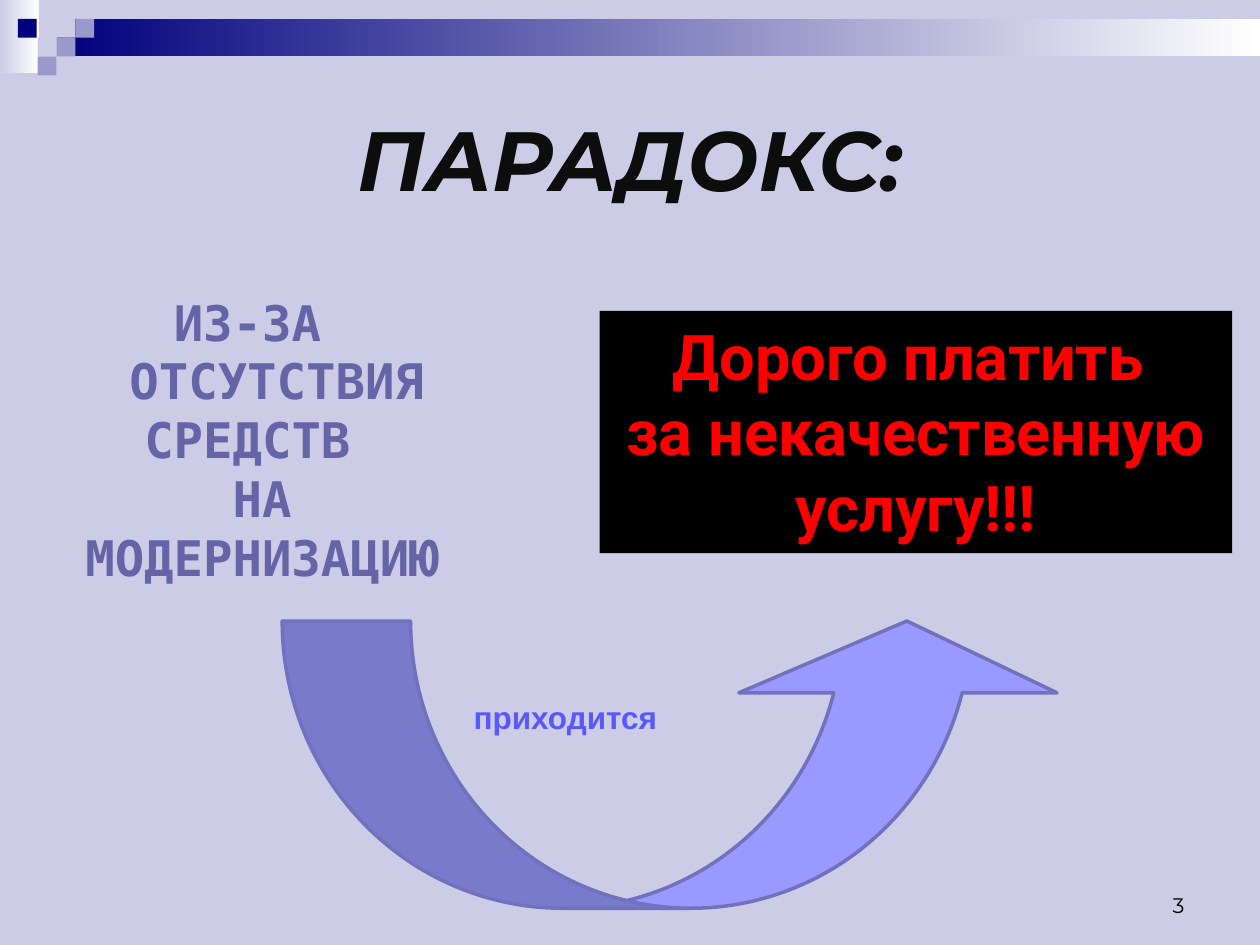
"""Build the slide about the paradox of paying dearly for a poor service."""
from dataclasses import dataclass
from typing import NamedTuple, Optional

from pptx import Presentation
from pptx.dml.color import RGBColor as RGB
from pptx.enum.shapes import MSO_SHAPE as SHAPE
from pptx.enum.text import MSO_ANCHOR as ANCHOR, PP_ALIGN as ALIGN
from pptx.util import Cm, Pt


@dataclass(frozen=True)
class Theme:
    back: str = "CCCCE6"
    navy: str = "00007D"
    lilac: str = "9999CC"
    white: str = "FFFFFF"
    black: str = "000000"
    title: str = "0D0D0D"
    cause: str = "6464A6"
    alarm: str = "FF0000"
    link: str = "5858FF"
    arrow: str = "9999FF"
    arrow_line: str = "7171BD"
    title_size: int = 48
    alarm_size: int = 36
    cause_size: int = 28
    link_size: int = 18
    number_size: int = 12


class Box(NamedTuple):
    left: float
    top: float
    width: float
    height: float


class Line(NamedTuple):
    text: str
    margin: float = 0


class Square(NamedTuple):
    col: float
    row: float
    color: str


T = Theme()
CELL = 0.38
SQUARES = [
    Square(3, 1, T.back), Square(4, 0, T.back), Square(4, 1, T.lilac),
    Square(2, 2, T.back), Square(0.95, 1, T.navy), Square(3, 2, T.lilac),
    Square(2, 3, T.lilac),
]
CAUSE = [Line("ИЗ-ЗА "), Line("ОТСУТСТВИЯ", 0.59), Line("СРЕДСТВ "),
         Line("НА"), Line("МОДЕРНИЗАЦИЮ")]
ALARM = [Line("Дорого платить "), Line("за некачественную услугу!!!")]


def lengths(box: Box) -> list:
    """Return the four sides of a box as lengths."""
    return [Cm(v) for v in box]


def add_shape(slide, kind, box: Box, color: str, end: Optional[str] = None):
    """Add a shape with no line, filled plainly or with a gradient to end."""
    sp = slide.shapes.add_shape(kind, *lengths(box))
    sp.shadow.inherit = False
    sp.line.fill.background()
    if end:
        sp.fill.gradient()
        sp.fill.gradient_angle = 0
        for stop, value in zip(sp.fill.gradient_stops, (color, end)):
            stop.color.rgb = RGB.from_string(value)
    else:
        sp.fill.solid()
        sp.fill.fore_color.rgb = RGB.from_string(color)
    return sp


def write(sp, lines: list, *, size: int, font: str, color: str, bold: bool = True,
          italic: bool = False, align=ALIGN.CENTER, anchor=ANCHOR.TOP,
          inset: Optional[float] = None) -> None:
    """Put formatted lines of text into a shape."""
    tf = sp.text_frame
    tf.word_wrap = True
    tf.vertical_anchor = anchor
    if inset is not None:
        tf.margin_left = tf.margin_right = tf.margin_top = tf.margin_bottom = Cm(inset)
    for i, line in enumerate(lines):
        p = tf.paragraphs[0] if i == 0 else tf.add_paragraph()
        p.alignment = align
        if line.margin:
            pPr = p._p.get_or_add_pPr()
            pPr.set("marL", str(Cm(line.margin)))
            pPr.set("indent", "0")
        r = p.add_run()
        r.text = line.text
        f = r.font
        f.size, f.name, f.bold, f.italic = Pt(size), font, bold, italic
        f.color.rgb = RGB.from_string(color)


def add_text(slide, box: Box, lines: list, **style) -> None:
    """Add a text box with formatted lines."""
    write(slide.shapes.add_textbox(*lengths(box)), lines, **style)


def add_banner(slide) -> None:
    """Draw the gradient bands and the small squares at the top."""
    add_shape(slide, SHAPE.RECTANGLE, Box(0, 0, 0.78, 1.47), T.back, T.white)
    add_shape(slide, SHAPE.RECTANGLE, Box(3 * CELL, CELL, 25.4 - 3 * CELL, 2 * CELL),
              T.navy, T.white)
    for sq in SQUARES:
        add_shape(slide, SHAPE.RECTANGLE,
                  Box(sq.col * CELL, sq.row * CELL, CELL, CELL), sq.color)


def add_arrow(slide) -> None:
    """Draw the curved arrow from the cause to the result."""
    sp = add_shape(slide, SHAPE.CURVED_UP_ARROW, Box(5.69, 12.52, 15.8, 5.79), T.arrow)
    for i, value in enumerate((0.447, 1.108, 0.25)):
        sp.adjustments[i] = value
    sp.line.color.rgb = RGB.from_string(T.arrow_line)
    sp.line.width = Pt(2)


def main() -> None:
    """Build and save the presentation."""
    prs = Presentation()
    prs.slide_width, prs.slide_height = Cm(25.4), Cm(19.05)
    s = prs.slides.add_slide(prs.slide_layouts[6])
    s.background.fill.solid()
    s.background.fill.fore_color.rgb = RGB.from_string(T.back)

    add_banner(s)
    add_text(s, Box(1.27, 1.27, 22.86, 3.81), [Line("ПАРАДОКС:")], size=T.title_size,
             font="Montserrat", color=T.title, italic=True, anchor=ANCHOR.MIDDLE)
    add_text(s, Box(0.46, 5.89, 9.65, 8.56), CAUSE, size=T.cause_size,
             font="DejaVu Sans Mono", color=T.cause, inset=0)
    alarm = add_shape(s, SHAPE.RECTANGLE, Box(12.09, 6.27, 12.75, 4.88), T.black)
    write(alarm, ALARM, size=T.alarm_size, font="Roboto", color=T.alarm)
    add_arrow(s)
    add_text(s, Box(9.3, 13.94, 6.81, 2.62), [Line("приходится")], size=T.link_size,
             font="Arial", color=T.link, align=ALIGN.LEFT)
    add_text(s, Box(18.21, 17.35, 5.92, 1.27), [Line("3")], size=T.number_size,
             font="Montserrat", color=T.black, bold=False, align=ALIGN.RIGHT,
             anchor=ANCHOR.BOTTOM)
    prs.save("out.pptx")


if __name__ == "__main__":
    main()
